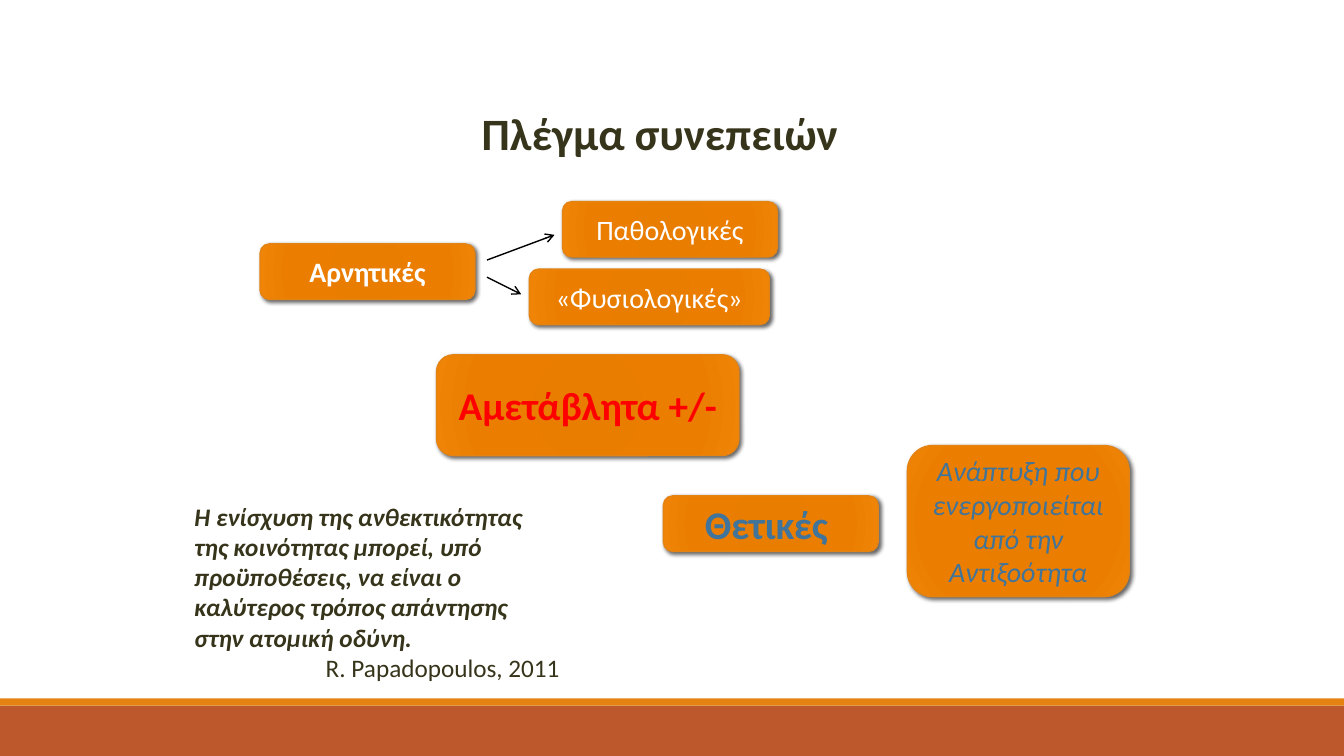
from dataclasses import dataclass

from lxml.etree import SubElement
from pptx import Presentation
from pptx.dml.color import RGBColor
from pptx.enum.shapes import MSO_CONNECTOR, MSO_SHAPE
from pptx.enum.text import MSO_ANCHOR, MSO_AUTO_SIZE, PP_ALIGN
from pptx.oxml.ns import qn
from pptx.util import Inches, Pt


@dataclass(frozen=True)
class Theme:
    font: str = "Calibri"
    text: str = "36341A"
    white: str = "FFFFFF"
    red: str = "FF0000"
    blue: str = "40749B"
    black: str = "000000"
    orange: str = "E48312"
    rust: str = "BD582C"
    gradient: tuple = ((0, "E57B00"), (34, "E87D00"), (70, "EB7E00"), (100, "EF8407"))
    title_size: int = 32
    large: int = 28
    medium: int = 20
    small: int = 18


THEME = Theme()
WIDTH, HEIGHT = 13.33, 7.5


def inches(*lengths):
    return [Inches(length) for length in lengths]


def style(p, size, color, align=PP_ALIGN.CENTER, bold=False, italic=False):
    p.alignment = align
    p.font.name = THEME.font
    p.font.size = Pt(size)
    p.font.color.rgb = RGBColor.from_string(color)
    p.font.bold = bold
    p.font.italic = italic


def add_color(parent, color):
    return SubElement(parent, qn("a:srgbClr"), val=color)


def fill_radial(sp):
    """Fill with the theme gradient; call before the line is set, as fill precedes line."""
    grad = SubElement(sp._element.spPr, qn("a:gradFill"), rotWithShape="1")
    stops = SubElement(grad, qn("a:gsLst"))
    for percent, color in THEME.gradient:
        add_color(SubElement(stops, qn("a:gs"), pos=str(percent * 1000)), color)
    circle = SubElement(grad, qn("a:path"), path="circle")
    SubElement(circle, qn("a:fillToRect"), dict.fromkeys("ltrb", "100000"))


def add_shadow(sp):
    sp.shadow.inherit = False
    effects = sp._element.spPr.find(qn("a:effectLst"))
    shadow = SubElement(effects, qn("a:outerShdw"), blurRad=str(Pt(3)), dist=str(Pt(2)),
                        dir=str(45 * 60000), algn="tl", rotWithShape="0")
    SubElement(add_color(shadow, THEME.black), qn("a:alpha"), val="60000")


def add_footer(s, box):
    """Draw a rust band with a thin orange strip along its top."""
    left, top, width, height = box
    strip = 0.07
    for y, h, color in ((top, height, THEME.rust), (top - strip, strip, THEME.orange)):
        sp = s.shapes.add_shape(MSO_SHAPE.RECTANGLE, *inches(left, y, width, h))
        sp.shadow.inherit = False
        sp.fill.solid()
        sp.fill.fore_color.rgb = RGBColor.from_string(color)
        sp.line.fill.background()


def add_title(s, box, text):
    title = s.shapes.title
    title.left, title.top, title.width, title.height = inches(*box)
    tf = title.text_frame
    tf.text = text
    tf.auto_size = MSO_AUTO_SIZE.NONE
    tf.vertical_anchor = MSO_ANCHOR.TOP
    style(tf.paragraphs[0], THEME.title_size, THEME.text, bold=True)


def add_quote(s, box, quote, author):
    tf = s.shapes.add_textbox(*inches(*box)).text_frame
    tf.word_wrap = True
    tf.auto_size = MSO_AUTO_SIZE.SHAPE_TO_FIT_TEXT
    tf.text = quote
    style(tf.paragraphs[0], THEME.small, THEME.text, PP_ALIGN.LEFT, bold=True, italic=True)
    p = tf.add_paragraph()
    p.text = author
    style(p, THEME.small, THEME.text, PP_ALIGN.RIGHT)


def add_node(s, box, text, size, color, bold=False, italic=False):
    sp = s.shapes.add_shape(MSO_SHAPE.ROUNDED_RECTANGLE, *inches(*box))
    fill_radial(sp)
    sp.line.color.rgb = RGBColor.from_string(THEME.orange)
    sp.line.width = Pt(1)
    add_shadow(sp)
    tf = sp.text_frame
    tf.word_wrap = True
    tf.vertical_anchor = MSO_ANCHOR.MIDDLE
    tf.text = text
    style(tf.paragraphs[0], size, color, bold=bold, italic=italic)


def add_arrow(s, start, end):
    line = s.shapes.add_connector(MSO_CONNECTOR.STRAIGHT, *inches(*start, *end))
    line.line.color.rgb = RGBColor.from_string(THEME.black)
    line.line.width = Pt(1)
    SubElement(line.line._get_or_add_ln(), qn("a:tailEnd"), type="arrow")
    SubElement(line._element.spPr, qn("a:effectLst"))


def add_consequences(s, box):
    """Draw the grid of negative, unchanged and positive consequences."""
    left, top = box[:2]
    w, h = 2.13, 0.55
    nodes = (
        ((0, 0.42, w, h), "Αρνητικές", THEME.medium, THEME.white, True, False),
        ((1.75, 1.52, 3, 1), "Αμετάβλητα +/-", THEME.large, THEME.red, True, False),
        ((4, 2.92, w, h), "Θετικές ", THEME.large, THEME.blue, True, False),
        ((6.42, 2.42, 2.2, 1.5), "Ανάπτυξη που ενεργοποιείται από την Αντιξοότητα",
         THEME.medium, THEME.blue, False, True),
        ((3, 0, w, h), "Παθολογικές", THEME.medium, THEME.white, False, False),
        ((2.67, 0.67, 2.38, h), "«Φυσιολογικές»", THEME.medium, THEME.white, False, False),
    )
    for (x, y, width, height), *content in nodes:
        add_node(s, (left + x, top + y, width, height), *content)
    for x1, y1, x2, y2 in ((2.25, 0.58, 2.92, 0.33), (2.25, 0.75, 2.59, 0.92)):
        add_arrow(s, (left + x1, top + y1), (left + x2, top + y2))


def main():
    prs = Presentation()
    prs.slide_width, prs.slide_height = inches(WIDTH, HEIGHT)
    s = prs.slides.add_slide(prs.slide_layouts.get_by_name("Title Only"))
    add_footer(s, (0, 7, WIDTH, 0.5))
    add_title(s, (4.42, 1, 4.25, 0.77), "Πλέγμα συνεπειών")
    add_quote(s, (1.83, 4.92, 3.82, 1.92),
              "Η ενίσχυση της ανθεκτικότητας της κοινότητας μπορεί, υπό προϋποθέσεις, "
              "να είναι ο καλύτερος τρόπος απάντησης στην ατομική οδύνη.",
              "R. Papadopoulos, 2011")
    add_consequences(s, (2.58, 2, 8.62, 3.92))
    prs.save("out.pptx")


if __name__ == "__main__":
    main()
